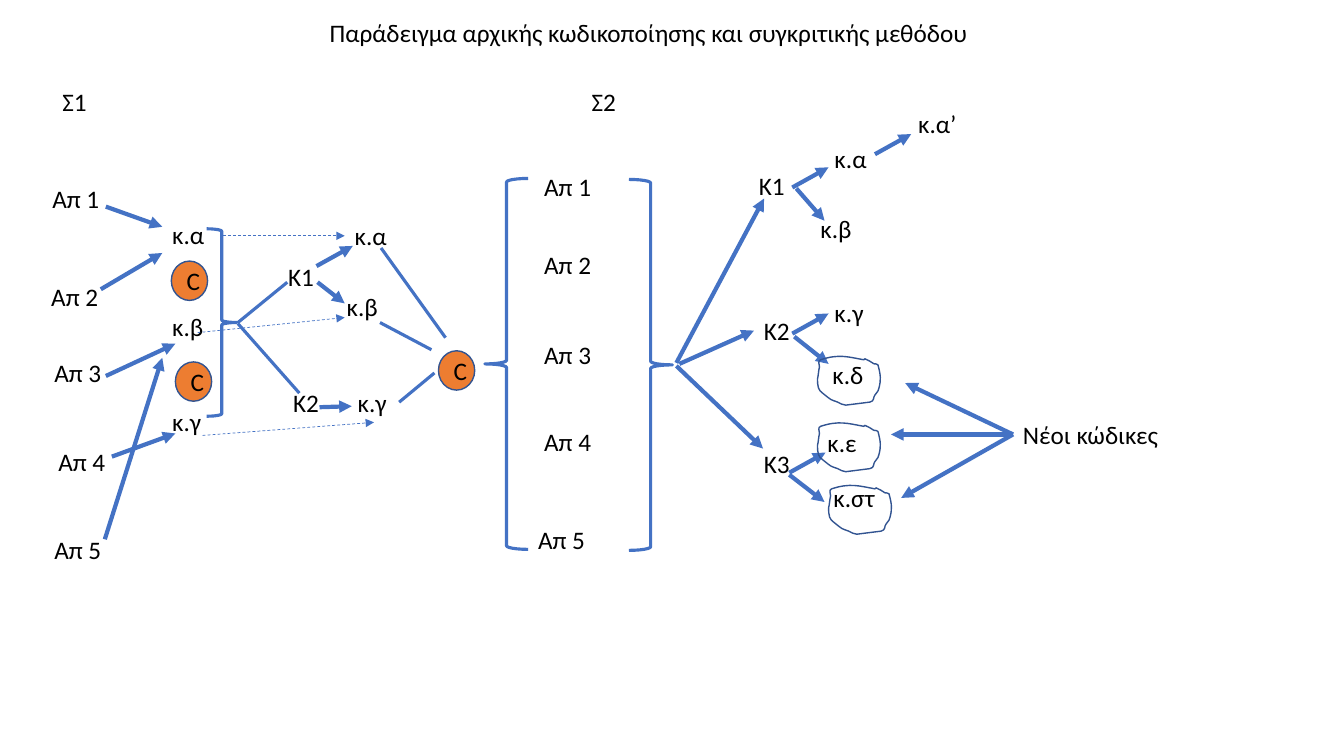
from dataclasses import dataclass

from lxml import etree
from pptx import Presentation
from pptx import util as u
from pptx.dml.color import RGBColor
from pptx.enum import dml, shapes, text
from pptx.oxml.ns import qn

CELL = u.Inches(0.1)  # the slide is a grid of 133.3 columns by 75 rows
COLUMNS, ROWS = 133.33, 75
LABEL_HEIGHT = 4


@dataclass(frozen=True)
class Theme:
    font: str = "Calibri"
    size: float = 18
    ink: str = "000000"
    accent: str = "4472C4"
    outline: str = "325491"
    marker: str = "ED7D31"
    arrow: float = 3
    branch: float = 2.25
    hint: float = 0.5
    thin: float = 1


THEME = Theme()

# Labels: column, row, width, wording
HEADINGS = [(5.2, 8.1, 6.2, "Σ1"), (57.7, 8.1, 4.6, "Σ2")]
ANSWERS = [
    (4.2, 17.7, 6.9, "Απ 1"), (4.1, 27.4, 8, "Απ 2"), (4.4, 35, 8, "Απ 3"),
    (4.8, 43.8, 8, "Απ 4"), (4.4, 52.5, 8, "Απ 5"),
    (53, 16.5, 6.9, "Απ 1"), (53, 24.2, 8, "Απ 2"), (53, 33.2, 8, "Απ 3"),
    (53, 41.8, 8, "Απ 4"), (52.4, 51.5, 8, "Απ 5"),
]
CODES = [
    (16.1, 21.3, 6.2, "κ.α"), (16.1, 30.4, 5.3, "κ.β"), (16.1, 39.8, 5.6, "κ.γ"),
    (33.4, 28.4, 5.6, "κ.β"), (34.5, 37.9, 5.1, "κ.γ"),
    (81.8, 13.7, 5.9, "κ.α"), (90.1, 10.3, 5.9, "κ.α’"), (80.4, 20.7, 5.6, "κ.β"),
    (81.8, 29, 5.1, "κ.γ"), (81.6, 35.2, 5.1, "κ.δ"), (81.1, 41.9, 5.9, "κ.ε"),
    (81.7, 47.4, 7.7, "κ.στ"),
]
CATEGORIES = [
    (27.6, 25.4, 4.8, "Κ1"), (28.1, 37.9, 4.8, "Κ2"),
    (74.3, 16.4, 4.8, "Κ1"), (74.8, 44, 4.8, "Κ3"),
]

# Lines: start column and row, end column and row
ARROWS = [
    (10.5, 20.5, 16.1, 22.5), (10, 28.7, 16.1, 25.1), (10.5, 37.3, 17.4, 34.1),
    (11.1, 45.3, 17.4, 43), (10.4, 53.5, 16.1, 35.5),
    (31.4, 26.4, 35, 24.4), (31.5, 28, 34.2, 30.1), (31.7, 40.4, 34.9, 40.3),
    (78.6, 18.6, 82.2, 16.6), (86.8, 15.3, 90.4, 13.3), (79, 18.7, 81.8, 21.9),
    (78.6, 33.1, 82.2, 31.1), (78.8, 33.4, 82.2, 36.1),
    (78.3, 47.1, 81.8, 49.8), (78.3, 46.9, 81.9, 44.9),
    (67.1, 36, 75.8, 19.7), (67.1, 36.3, 75.7, 44.5),
]
BRANCHES = [
    (23.6, 32, 28.5, 28), (23.6, 32.1, 29.7, 39),
    (37.8, 24.6, 44.2, 33.5), (37.7, 32, 42.8, 34.7), (39.6, 39.9, 43.1, 37),
]
HINTS = [(19.6, 33, 34.2, 31.5), (20.1, 43.2, 37.1, 41.9)]
NEW_CODE_TIPS = [(89.8, 38), (88.4, 43.1), (89.4, 49.4)]

BRACES = [(20.5, 22.7, 3, 18.6, 0), (48.1, 17.7, 4.3, 36.8, 180),
          (62.4, 17.8, 4.3, 36.8, 0)]
COMPARISONS = [(17, 25.9), (17.4, 35.9), (43.5, 34.8)]
LOOPS = [(81.1, 35.3), (81.1, 41.9), (82.2, 48.1)]

# Hand-drawn loop: a start, then cubic curves of two handles and an end
LOOP_START = (4.6, 0.4)
LOOP_CURVES = [
    ((3, 0.1), (2.1, -0.2), (0.3, 0.4)), ((0, 0.5), (0.2, 0.9), (0.2, 1.1)),
    ((0.1, 1.5), (0.1, 1.9), (0, 2.3)), ((0, 2.6), (0, 2.9), (0.1, 3.2)),
    ((0.2, 3.4), (0.3, 3.6), (0.5, 3.7)), ((1.5, 4.5), (1.2, 4.3), (2, 4.6)),
    ((2.1, 4.7), (2.3, 4.7), (2.4, 4.8)), ((2.5, 4.8), (2.7, 4.9), (2.8, 4.9)),
    ((3.6, 4.8), (4.4, 4.7), (5.2, 4.6)), ((5.7, 4.5), (5.5, 4.1), (5.7, 3.9)),
    ((5.7, 3.9), (6, 3.5), (6, 3.5)), ((6, 3.4), (6, 3.3), (6.1, 3.2)),
    ((6.3, 2.4), (6.3, 2), (6, 0.9)), ((5.9, 0.8), (5.7, 0.8), (5.6, 0.8)),
    ((5.3, 0.6), (5, 0.4), (4.7, 0.3)), ((4.6, 0.3), (4.6, 0.4), (4.6, 0.4)),
]


def cells(*counts):
    return [round(count * CELL) for count in counts]


def color(code):
    return RGBColor.from_string(code)


def write(shape, wording, align=text.PP_ALIGN.LEFT, anchor=text.MSO_ANCHOR.TOP,
          grow=True):
    frame = shape.text_frame
    frame.word_wrap = True
    frame.vertical_anchor = anchor
    if grow:
        frame.auto_size = text.MSO_AUTO_SIZE.SHAPE_TO_FIT_TEXT
    paragraph = frame.paragraphs[0]
    paragraph.alignment = align
    run = paragraph.add_run()
    run.text = wording
    run.font.name = THEME.font
    run.font.size = u.Pt(THEME.size)
    run.font.color.rgb = color(THEME.ink)


def add_title(slide, wording):
    title = slide.shapes.title
    title.left, title.top, title.width, title.height = cells(
        31.7, 1.2, 69.9, LABEL_HEIGHT)
    write(title, wording)


def add_label(slide, column, row, width, wording):
    label = slide.shapes.add_textbox(*cells(column, row, width, LABEL_HEIGHT))
    write(label, wording)
    return label


def style(shape, line, weight, fill=None):
    shape.shadow.inherit = False
    if fill:
        shape.fill.solid()
        shape.fill.fore_color.rgb = color(fill)
    else:
        shape.fill.background()
    shape.line.color.rgb = color(line)
    shape.line.width = u.Pt(weight)


def add_line(slide, ends, weight, arrow=True, dashed=False):
    line = slide.shapes.add_connector(shapes.MSO_CONNECTOR.STRAIGHT, *cells(*ends))
    line.line.color.rgb = color(THEME.accent)
    line.line.width = u.Pt(weight)
    if dashed:
        line.line.dash_style = dml.MSO_LINE.DASH
    if arrow:
        etree.SubElement(line.line._get_or_add_ln(), qn("a:tailEnd"), type="triangle")
    etree.SubElement(line._element.spPr, qn("a:effectLst"))
    return line


def add_brace(slide, column, row, width, height, turn):
    brace = slide.shapes.add_shape(
        shapes.MSO_SHAPE.RIGHT_BRACE, *cells(column, row, width, height))
    brace.rotation = turn
    style(brace, THEME.accent, THEME.branch)


def add_comparison(slide, column, row):
    """Add the round C that marks a constant comparison."""
    disc = slide.shapes.add_shape(
        shapes.MSO_SHAPE.OVAL, *cells(column, row, 3.6, 3.9))
    style(disc, THEME.outline, THEME.thin, THEME.marker)
    write(disc, "C", text.PP_ALIGN.CENTER, text.MSO_ANCHOR.MIDDLE, grow=False)


def add_loop(slide, column, row):
    """Add a hand-drawn loop, bending each straight segment into its curve."""
    def place(point):
        return cells(column + point[0], row + point[1])

    outline = slide.shapes.build_freeform(*place(LOOP_START))
    outline.add_line_segments([place(curve[-1]) for curve in LOOP_CURVES], close=True)
    loop = outline.convert_to_shape()
    segments = list(loop._element.iter(qn("a:lnTo")))
    for segment, curve in zip(segments, LOOP_CURVES):
        segment.tag = qn("a:cubicBezTo")
        segment.clear()
        for x, y in map(place, curve):
            etree.SubElement(segment, qn("a:pt"),
                             x=str(x - loop.left), y=str(y - loop.top))
    style(loop, THEME.outline, THEME.thin)


def main():
    deck = Presentation()
    deck.slide_width, deck.slide_height = cells(COLUMNS, ROWS)
    slide = deck.slides.add_slide(deck.slide_layouts[5])

    add_title(slide, "Παράδειγμα αρχικής κωδικοποίησης και συγκριτικής μεθόδου")
    for label in HEADINGS + ANSWERS + CODES + CATEGORIES:
        add_label(slide, *label)
    compared_code = add_label(slide, 34.2, 21.4, 5.9, "κ.α")
    second_category = add_label(slide, 74.8, 30.8, 4.8, "Κ2")
    new_codes = add_label(slide, 100.5, 41.1, 21.7, "Νέοι κώδικες")

    for brace in BRACES:
        add_brace(slide, *brace)
    for comparison in COMPARISONS:
        add_comparison(slide, *comparison)
    for ends in ARROWS:
        add_line(slide, ends, THEME.arrow)
    for ends in BRANCHES:
        add_line(slide, ends, THEME.branch, arrow=False)
    for ends in HINTS:
        add_line(slide, ends, THEME.hint, dashed=True)
    for loop in LOOPS:
        add_loop(slide, *loop)

    add_line(slide, (22.1, 23.4, 34.2, 23.4), THEME.hint,
             dashed=True).end_connect(compared_code, 1)
    add_line(slide, (67.4, 36.1, 74.8, 32.8), THEME.arrow).end_connect(
        second_category, 1)
    for tip in NEW_CODE_TIPS:
        add_line(slide, (100.5, 43.1, *tip), THEME.arrow).begin_connect(new_codes, 1)

    deck.save("out.pptx")


if __name__ == "__main__":
    main()
